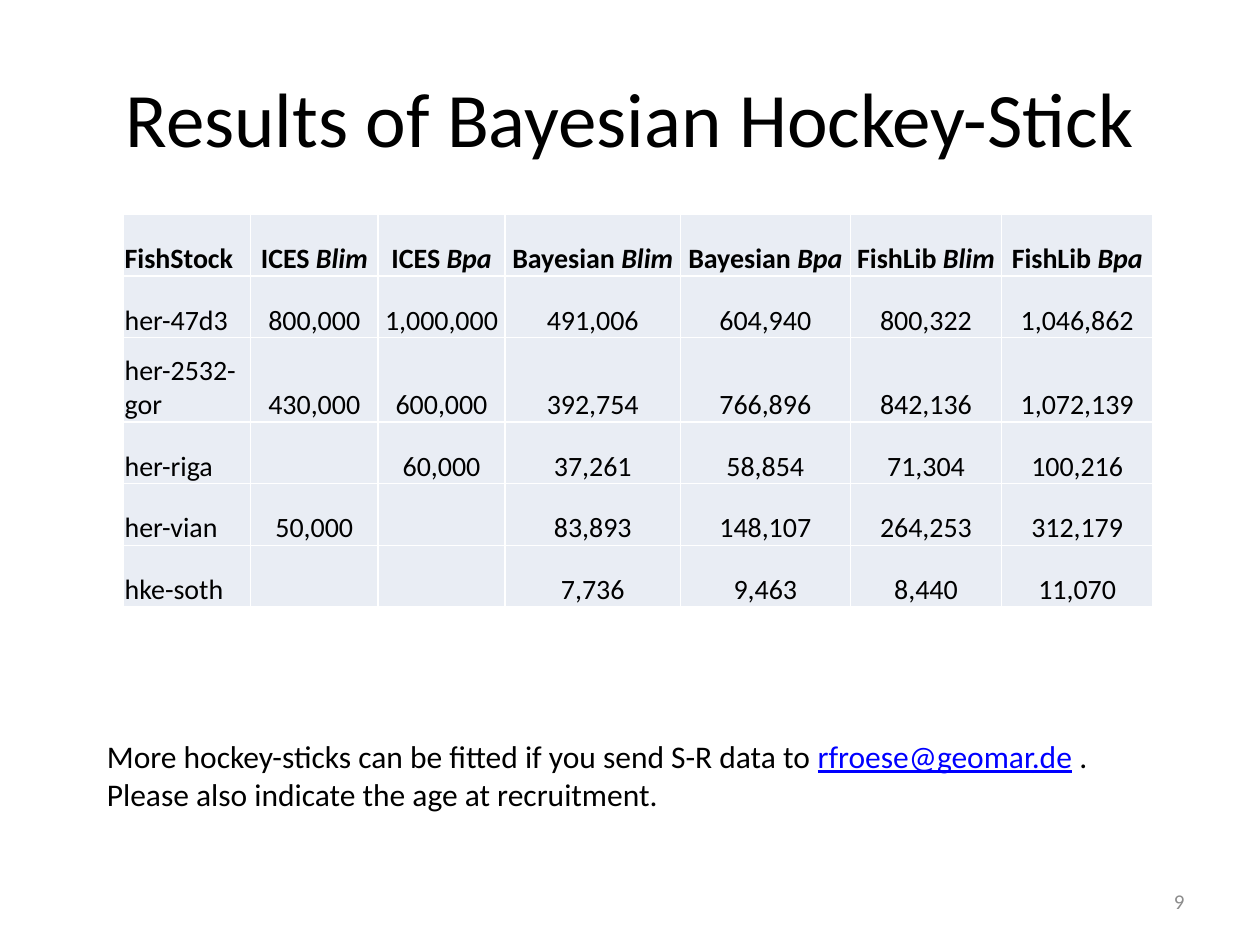
"""Build the slide with the results table of the Bayesian hockey-stick fits."""
import pptx
import pptx.dml.color
import pptx.enum.text
import pptx.util

Inches = pptx.util.Inches
ALIGN = pptx.enum.text.PP_ALIGN
ANCHOR = pptx.enum.text.MSO_ANCHOR
COLOURS = {"text": "000000", "link": "0000FF", "number": "8C8C8C", "cell": "E9EDF4"}


def style_font(font, size, colour="text"):
    font.name = "Calibri"
    font.size = pptx.util.Pt(size)
    font.color.rgb = pptx.dml.color.RGBColor.from_string(COLOURS[colour])


def add_text(page, left, top, width, height, lines, size, align, anchor, colour="text", wrap=True):
    box = page.shapes.add_textbox(Inches(left), Inches(top), Inches(width), Inches(height))
    frame = box.text_frame
    frame.word_wrap = wrap
    frame.vertical_anchor = anchor
    frame.text = "\n".join(lines)
    for para in frame.paragraphs:
        para.alignment = align
        style_font(para.font, size, colour)
    return frame


deck = pptx.Presentation()
deck.slide_width, deck.slide_height = Inches(10), Inches(7.5)
page = deck.slides.add_slide(deck.slide_layouts[6])

add_text(page, 0.5, 0.3, 9, 1.25, ["Results of Bayesian Hockey-Stick"], 44, ALIGN.CENTER, ANCHOR.MIDDLE)

header = [("FishStock", "")] + [
    (f"{source} ", limit) for source in ("ICES", "Bayesian", "FishLib") for limit in ("Blim", "Bpa")
]
stocks = [
    ("her-47d3", "800,000", "1,000,000", "491,006", "604,940", "800,322", "1,046,862"),
    ("her-2532-gor", "430,000", "600,000", "392,754", "766,896", "842,136", "1,072,139"),
    ("her-riga", "", "60,000", "37,261", "58,854", "71,304", "100,216"),
    ("her-vian", "50,000", "", "83,893", "148,107", "264,253", "312,179"),
    ("hke-soth", "", "", "7,736", "9,463", "8,440", "11,070"),
]
rows = [header] + [[(value, "") for value in stock] for stock in stocks]
column_widths = [1.01, 1.01, 1.01, 1.39, 1.35, 1.2, 1.2]
row_heights = [0.49, 0.49, 0.67, 0.49, 0.49, 0.49]

table = page.shapes.add_table(
    len(rows), len(header), Inches(0.98), Inches(1.7), Inches(8.19), Inches(3.14)
).table
table.first_row = False
table.horz_banding = False
for column, width in zip(table.columns, column_widths):
    column.width = Inches(width)
for row, height in zip(table.rows, row_heights):
    row.height = Inches(height)

for row_index, row in enumerate(rows):
    for column_index, (plain, italic) in enumerate(row):
        cell = table.cell(row_index, column_index)
        cell.fill.solid()
        cell.fill.fore_color.rgb = pptx.dml.color.RGBColor.from_string(COLOURS["cell"])
        cell.vertical_anchor = ANCHOR.BOTTOM
        cell.margin_left = cell.margin_right = cell.margin_top = Inches(0.01)
        cell.margin_bottom = 0
        para = cell.text_frame.paragraphs[0]
        para.alignment = ALIGN.CENTER if column_index else ALIGN.LEFT
        style_font(para.font, 16)
        para.font.bold = row_index == 0
        if plain:
            para.add_run().text = plain
        if italic:
            span = para.add_run()
            span.text = italic
            span.font.italic = True

add_text(page, 7.17, 6.95, 2.33, 0.4, ["9"], 12, ALIGN.RIGHT, ANCHOR.MIDDLE, "number")

note_lines = [
    "More hockey-sticks can be fitted if you send S-R data to ",
    "Please also indicate the age at recruitment.",
]
note = add_text(page, 0.75, 5.8, 8.14, 0.71, note_lines, 18, ALIGN.LEFT, ANCHOR.TOP, wrap=False)
note.auto_size = pptx.enum.text.MSO_AUTO_SIZE.SHAPE_TO_FIT_TEXT
address = note.paragraphs[0].add_run()
address.text = "rfroese@geomar.de"
address.font.underline = True
address.font.color.rgb = pptx.dml.color.RGBColor.from_string(COLOURS["link"])
note.paragraphs[0].add_run().text = " ."

deck.save("out.pptx")
